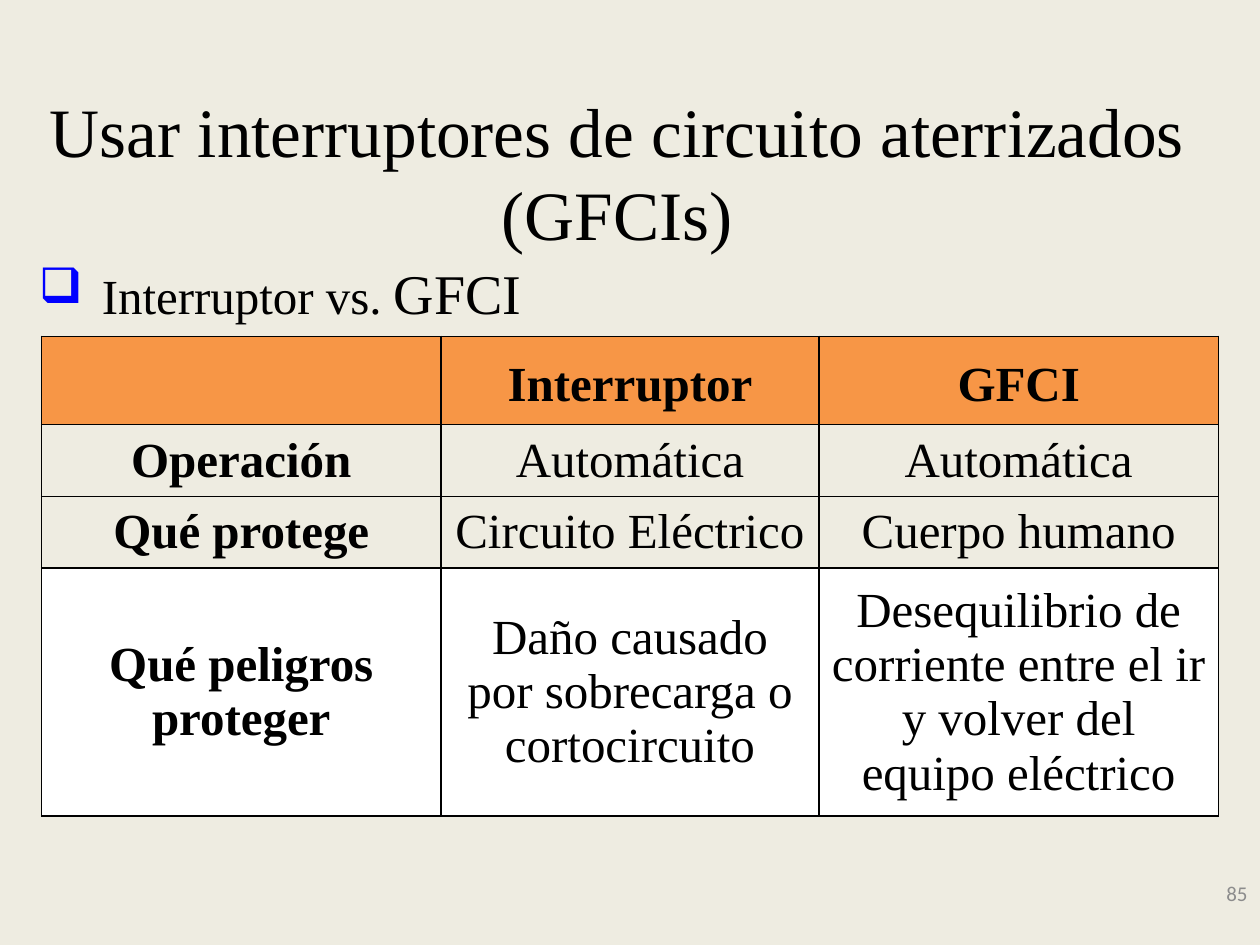
from lxml import etree
from pptx import Presentation, util as u
from pptx.dml.color import RGBColor
from pptx.enum import text as t
from pptx.oxml import ns

SERIF = "Times New Roman"
BLACK, ORANGE, WHITE = "000000", "F79646", "FFFFFF"
ALIGN = t.PP_ALIGN
MID = t.MSO_ANCHOR.MIDDLE

COLS = [3.17, 3, 3.17]
ROWS = [0.7, 0.57, 0.57, 1.96]
FILLS = [ORANGE, None, None, WHITE]
CELLS = [
    ["", "Interruptor", "GFCI"],
    ["Operación", "Automática", "Automática"],
    ["Qué protege", "Circuito Eléctrico", "Cuerpo humano"],
    ["Qué peligros proteger", "Daño causado por sobrecarga o cortocircuito",
     "Desequilibrio de corriente entre el ir y volver del equipo eléctrico"],
]


def paint(fill, color):
    fill.solid()
    fill.fore_color.rgb = RGBColor.from_string(color)


def style(run, size, color=BLACK, face=SERIF, bold=False):
    font = run.font
    font.size, font.name, font.bold = u.Pt(size), face, bold
    font.color.rgb = RGBColor.from_string(color)


def node(parent, tag, **attrs):
    return etree.SubElement(parent, ns.qn(tag), attrs)


def add_text(slide, area, words, align, size, **look):
    box = slide.shapes.add_textbox(*[u.Inches(n) for n in area])
    frame = box.text_frame
    frame.word_wrap = True
    frame.vertical_anchor = MID
    par = frame.paragraphs[0]
    par.text, par.alignment = words, align
    style(par.runs[0], size, **look)
    return par


def add_bullet(par, mark, color, indent):
    props = par._p.get_or_add_pPr()
    props.set("marL", str(u.Inches(indent)))
    props.set("indent", str(-u.Inches(indent)))
    node(node(props, "a:buClr"), "a:srgbClr", val=color)
    node(props, "a:buChar", char=mark)


def add_edges(cell):
    props = cell._tc.get_or_add_tcPr()
    for side in "LRTB":
        line = node(props, "a:ln" + side, w=str(u.Pt(1)))
        node(node(line, "a:solidFill"), "a:srgbClr", val=BLACK)


def fill_cell(cell, words, color, head, bold):
    add_edges(cell)
    if color:
        paint(cell.fill, color)
    else:
        cell.fill.background()
    cell.vertical_anchor = MID
    if not words:
        return
    cell.margin_top = u.Inches(0.19 if head else 0.05)
    par = cell.text_frame.paragraphs[0]
    par.text, par.alignment = words, ALIGN.CENTER
    if head:
        par.line_spacing = 0.76
    style(par.runs[0], 28, bold=bold)


def add_grid(slide, left, top):
    area = [u.Inches(n) for n in (left, top, sum(COLS), sum(ROWS))]
    grid = slide.shapes.add_table(len(ROWS), len(COLS), *area).table
    for col, width in zip(grid.columns, COLS):
        col.width = u.Inches(width)
    for r, height in enumerate(ROWS):
        grid.rows[r].height = u.Inches(height)
        for c, words in enumerate(CELLS[r]):
            fill_cell(grid.cell(r, c), words, FILLS[r], r == 0,
                      r == 0 or c == 0)


def main():
    deck = Presentation()
    deck.slide_width, deck.slide_height = u.Inches(10), u.Inches(7.5)
    slide = deck.slides.add_slide(deck.slide_layouts[6])
    paint(slide.background.fill, "EEECE1")

    # Bulleted lead line, with a larger last word
    lead = add_text(slide, (0.21, 2, 4.87, 0.64), "Interruptor vs. ",
                    ALIGN.JUSTIFY, 28)
    word = lead.add_run()
    word.text = "GFCI"
    style(word, 32)
    add_bullet(lead, "❑", "0000FF", 0.5)

    # Comparison table
    add_grid(slide, 0.33, 2.67)

    # Title and page number
    add_text(slide, (0.08, 1.05, 9.64, 0.62),
             "Usar interruptores de circuito aterrizados (GFCIs)",
             ALIGN.CENTER, 39.6)
    add_text(slide, (7.75, 6.89, 2.25, 0.4), "85", ALIGN.RIGHT, 12,
             color="8C8C8C", face="Calibri")

    deck.save("out.pptx")


if __name__ == "__main__":
    main()
